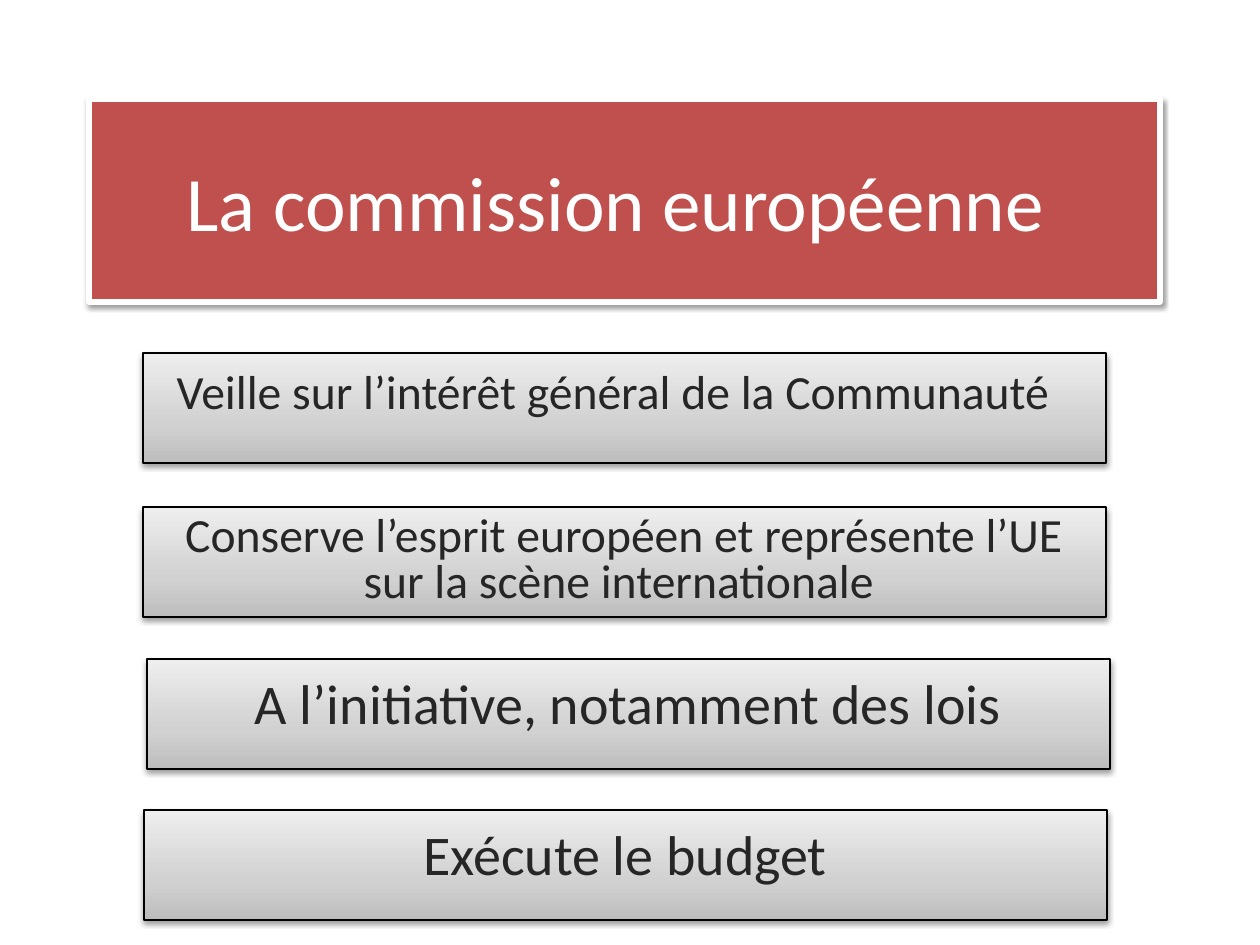
import pptx
import pptx.util
import pptx.dml.color
import pptx.enum.shapes
import pptx.enum.text
import pptx.oxml.ns
from lxml import etree

# Content
TITLE = "La commission européenne "
# text, left, top, size in pt, line spacing, extra right inset
ROWS = [
    ("Veille sur l’intérêt général de la Communauté ", 143, 353, 27.2, 1.0, 11),
    ("Conserve l’esprit européen et représente l’UE sur la scène internationale ",
     143, 507, 27.2, 0.8, 0),
    ("A l’initiative, notamment des lois", 147, 659, 32, 1.0, 0),
    ("Exécute le budget", 144, 810, 32, 1.0, 0),
]
STOPS = [(0, "BDBDBD"), (35, "D1D1D1"), (100, "EEEEEE")]
WIDE, HIGH = 963, 110
FONT = "Calibri"
SCALE = 914400 / 126
qn = pptx.oxml.ns.qn


def px(n):
    return pptx.util.Emu(round(n * SCALE))


def rgb(code):
    return pptx.dml.color.RGBColor.from_string(code)


def shade(shape):
    """Soft shadow straight below the shape."""
    shape.shadow.inherit = False
    effects = shape._element.spPr.find(qn("a:effectLst"))
    drop = etree.SubElement(effects, qn("a:outerShdw"), blurRad="40000",
                            dist="20000", dir="5400000", rotWithShape="0")
    tint = etree.SubElement(drop, qn("a:srgbClr"), val="000000")
    etree.SubElement(tint, qn("a:alpha"), val="38000")


def blend(shape):
    """Three-stop grey gradient, dark at the bottom."""
    shape.fill.gradient()
    shape.fill.gradient_angle = 90
    stops = shape._element.spPr.find(qn("a:gradFill")).find(qn("a:gsLst"))
    for old in list(stops):
        stops.remove(old)
    for pos, code in STOPS:
        stop = etree.SubElement(stops, qn("a:gs"), pos=str(pos * 1000))
        etree.SubElement(stop, qn("a:srgbClr"), val=code)


def edge(shape, code, width):
    shape.line.color.rgb = rgb(code)
    shape.line.width = pptx.util.Pt(width)


def write(shape, text, size, code, anchor):
    frame = shape.text_frame
    frame.text = text
    frame.word_wrap = True
    frame.auto_size = pptx.enum.text.MSO_AUTO_SIZE.NONE
    frame.vertical_anchor = anchor
    para = frame.paragraphs[0]
    para.alignment = pptx.enum.text.PP_ALIGN.CENTER
    para.font.name = FONT
    para.font.size = pptx.util.Pt(size)
    para.font.color.rgb = rgb(code)
    return frame


deck = pptx.Presentation()
deck.slide_width, deck.slide_height = px(1260), px(945)
slide = deck.slides.add_slide(deck.slide_layouts[5])
anchors = pptx.enum.text.MSO_ANCHOR

# Title banner
title = slide.shapes.title
title.left, title.top, title.width, title.height = map(px, (89, 99, 1071, 203))
title.fill.solid()
title.fill.fore_color.rgb = rgb("C0504D")
edge(title, "FFFFFF", 3)
shade(title)
write(title, TITLE, 44, "FFFFFF", anchors.MIDDLE)

# Role boxes
for text, left, top, size, lead, pad in ROWS:
    box = slide.shapes.add_shape(pptx.enum.shapes.MSO_SHAPE.RECTANGLE,
                                 px(left), px(top), px(WIDE), px(HIGH))
    blend(box)
    edge(box, "000000", 0.75)
    shade(box)
    frame = write(box, text, size, "262626", anchors.TOP)
    frame.margin_top = px(9)
    frame.margin_right = px(13 + pad)
    frame.paragraphs[0].line_spacing = lead

deck.save("out.pptx")
